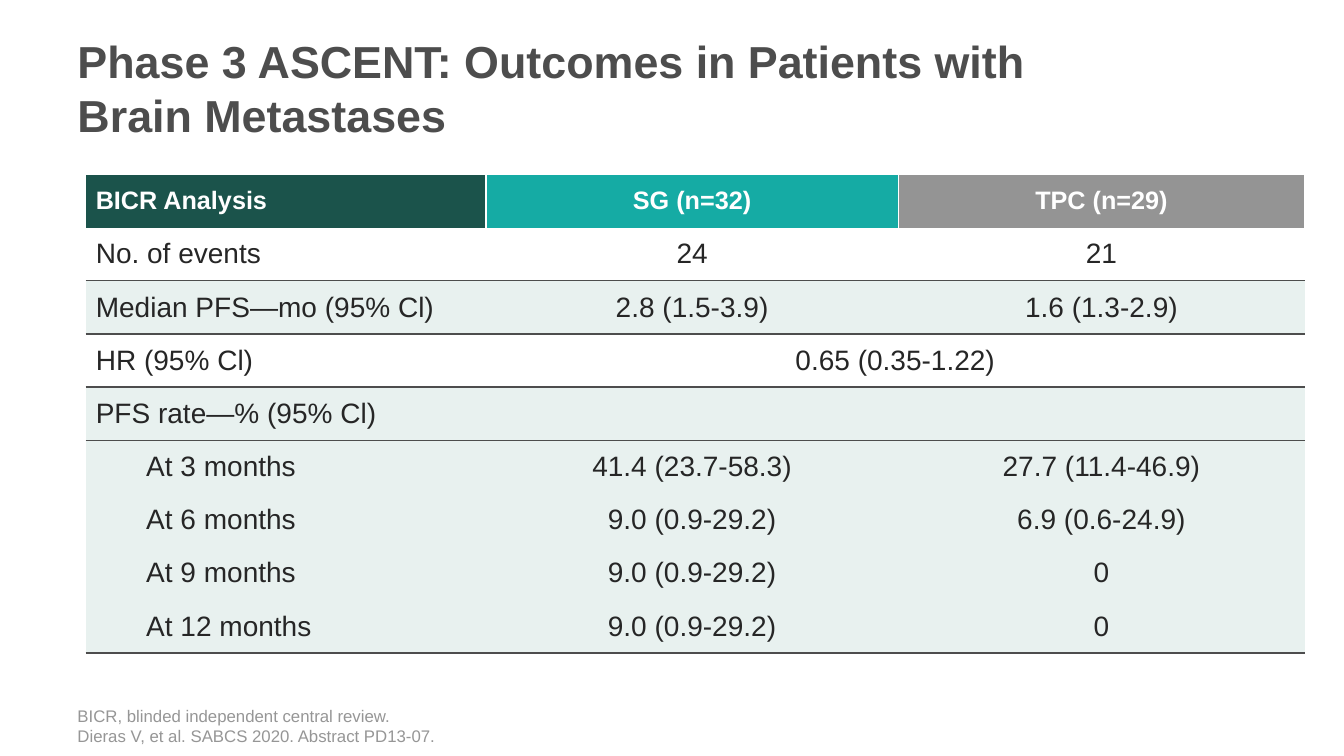
from dataclasses import dataclass

from lxml import etree
from pptx import Presentation
from pptx.dml.color import RGBColor
from pptx.enum.text import MSO_ANCHOR, PP_ALIGN
from pptx.oxml.ns import qn
from pptx.util import Inches, Pt

LEFT, CENTER = PP_ALIGN.LEFT, PP_ALIGN.CENTER
TOP, MIDDLE = MSO_ANCHOR.TOP, MSO_ANCHOR.MIDDLE
NO_STYLE = "{2D5ABB26-0587-4C30-8999-92F81FD0307C}"


@dataclass(frozen=True)
class Theme:
    font: str = "Arial"
    title: str = "4D4D4D"
    body: str = "262626"
    note: str = "969696"
    white: str = "FFFFFF"
    tint: str = "E8F1EF"
    rule: str = "4D4D4D"
    headers: tuple = ("1B534B", "15ABA4", "949494")
    title_size: int = 32
    header_size: int = 18
    body_size: int = 20
    note_size: int = 12


THEME = Theme()
HEADERS = ["BICR Analysis", "SG (n=32)", "TPC (n=29)"]
ROWS = [
    ["No. of events", "24", "21"],
    ["Median PFS—mo (95% Cl)", "2.8 (1.5-3.9)", "1.6 (1.3-2.9)"],
    ["HR (95% Cl)", "0.65 (0.35-1.22)", ""],
    ["PFS rate—% (95% Cl)", "", ""],
    ["At 3 months", "41.4 (23.7-58.3)", "27.7 (11.4-46.9)"],
    ["At 6 months", "9.0 (0.9-29.2)", "6.9 (0.6-24.9)"],
    ["At 9 months", "9.0 (0.9-29.2)", "0"],
    ["At 12 months", "9.0 (0.9-29.2)", "0"],
]
HR_ROW, RATE_ROW = 3, 4
COL_WIDTHS = [3.97, 4.09, 4.03]


def write_text(p, text, size, color, bold=False, align=LEFT):
    p.text = text
    p.alignment = align
    for r in p.runs:
        r.font.name = THEME.font
        r.font.size = Pt(size)
        r.font.bold = bold
        r.font.color.rgb = RGBColor.from_string(color)


def add_text(slide, box, paragraphs, anchor=TOP, **fmt):
    tf = slide.shapes.add_textbox(*map(Inches, box)).text_frame
    tf.word_wrap = True
    tf.vertical_anchor = anchor
    for i, text in enumerate(paragraphs):
        p = tf.add_paragraph() if i else tf.paragraphs[0]
        write_text(p, text, **fmt)


def add_border(cell, side, color):
    ln = etree.SubElement(cell._tc.get_or_add_tcPr(), qn(f"a:ln{side}"), w=str(Pt(1)))
    fill = etree.SubElement(ln, qn("a:solidFill"))
    etree.SubElement(fill, qn("a:srgbClr"), val=color)


def format_cell(cell, text, fill, borders, **fmt):
    for side, color in borders:
        add_border(cell, side, color)
    cell.fill.solid()
    cell.fill.fore_color.rgb = RGBColor.from_string(fill)
    cell.vertical_anchor = MIDDLE
    write_text(cell.text_frame.paragraphs[0], text, **fmt)


def add_outcomes_table(slide, box):
    last = len(ROWS)
    frame = slide.shapes.add_table(last + 1, len(HEADERS), *map(Inches, box))
    table = frame.table
    table._tbl.tblPr.find(qn("a:tableStyleId")).text = NO_STYLE
    table.horz_banding = False
    for col, width in zip(table.columns, COL_WIDTHS):
        col.width = Inches(width)
    for c, text in enumerate(HEADERS):
        format_cell(table.cell(0, c), text, THEME.headers[c],
                    [(side, THEME.white) for side in "LRT"],
                    size=THEME.header_size, color=THEME.white, bold=True,
                    align=CENTER if c else LEFT)
    table.cell(HR_ROW, 1).merge(table.cell(HR_ROW, 2))
    for i, row in enumerate(ROWS, 1):
        fill = THEME.tint if i >= RATE_ROW or i % 2 == 0 else THEME.white
        borders = [("T", THEME.rule)] if 1 < i <= RATE_ROW else []
        if i < RATE_ROW or i == last:
            borders.append(("B", THEME.rule))
        for c, text in enumerate(row):
            format_cell(table.cell(i, c), text, fill, borders,
                        size=THEME.body_size, color=THEME.body,
                        align=CENTER if c else LEFT)
        if i > RATE_ROW:
            p = table.cell(i, 0).text_frame.paragraphs[0]
            p.level = 1
            pPr = p._p.get_or_add_pPr()
            pPr.set("marL", str(Inches(0.5)))
            pPr.set("indent", "0")


def build_slide(prs):
    slide = prs.slides.add_slide(prs.slide_layouts[6])
    add_outcomes_table(slide, (0.85, 1.73, sum(COL_WIDTHS), 4.75))
    add_text(slide, (0.67, 0.22, 11.75, 1.3),
             ["Phase 3 ASCENT: Outcomes in Patients with\vBrain Metastases"],
             anchor=MIDDLE, size=THEME.title_size, color=THEME.title, bold=True)
    add_text(slide, (0.67, 6.95, 11.75, 0.48),
             ["BICR, blinded independent central review.",
              "Dieras V, et al. SABCS 2020. Abstract PD13-07."],
             size=THEME.note_size, color=THEME.note)


def main():
    prs = Presentation()
    prs.slide_width, prs.slide_height = Inches(13.33), Inches(7.5)
    build_slide(prs)
    prs.save("out.pptx")


if __name__ == "__main__":
    main()
